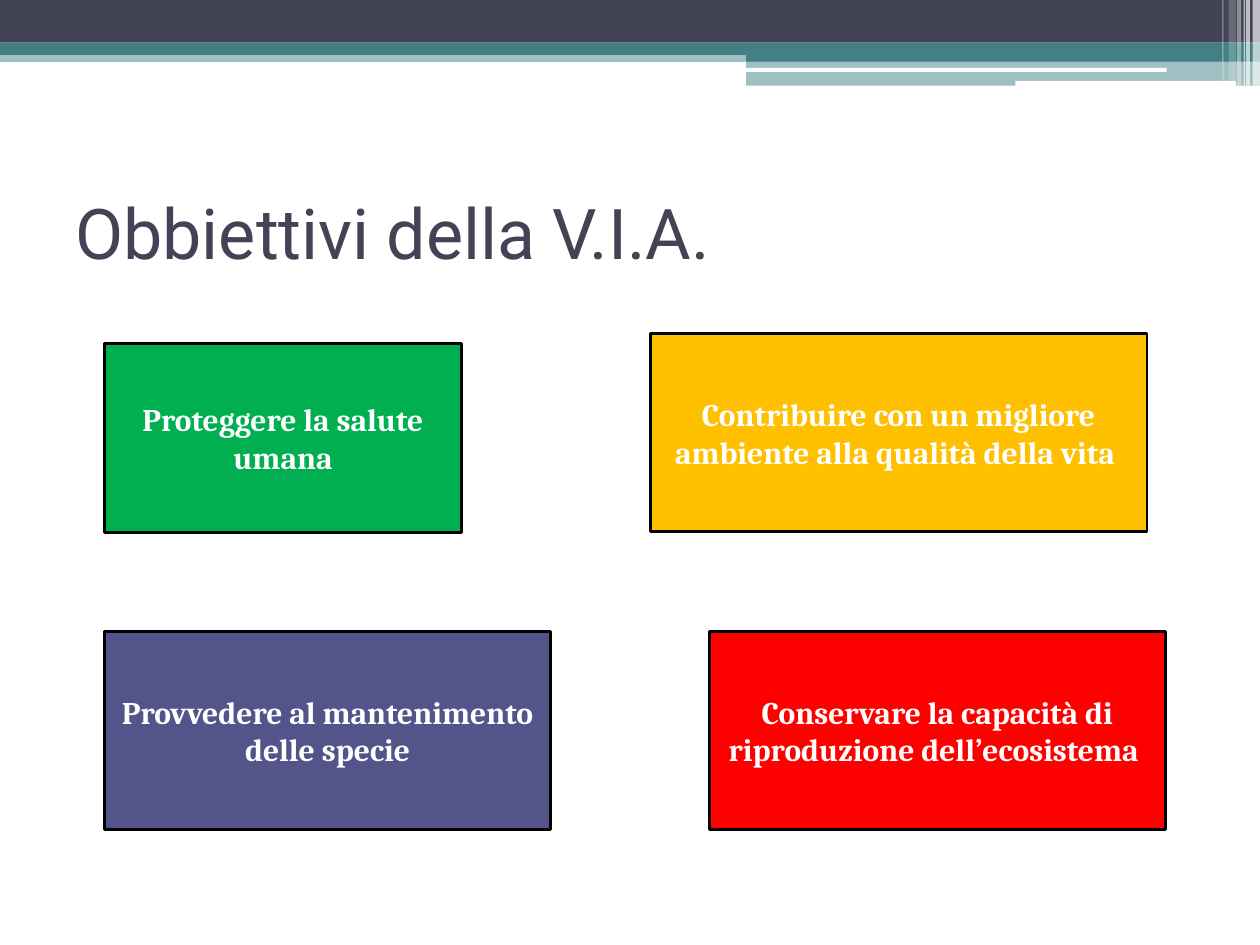
"""Builds a slide on the aims of the V.I.A. with four coloured boxes."""
from lxml.etree import SubElement
from pptx import Presentation
from pptx.dml.color import RGBColor
from pptx.enum.shapes import MSO_SHAPE
from pptx.enum.text import MSO_ANCHOR, PP_ALIGN
from pptx.oxml.ns import qn
from pptx.util import Cm, Pt

WIDTH, HEIGHT = 25.4, 19.05
WHITE, BLACK, DARK, TEAL = "FFFFFF", "000000", "424456", "438086"

BANDS = [
    (0, 1.02, WIDTH, 0.23, TEAL, 50),
    (0, 0, WIDTH, 0.86, DARK, 100),
    (0, 0.86, WIDTH, 0.25, TEAL, 100),
    (15.04, 0.99, 10.36, 0.25, TEAL, 100),
    (15.04, 1.22, 10.36, 0.51, TEAL, 50),
]
ROUNDED_LINES = [(15.01, 1.37, 8.51, 0.08), (20.47, 1.63, 4.45, 0.1)]
STRIPES = [
    (25.25, 0.15, 1.73, 65),
    (25.12, 0.08, 1.73, 65),
    (25.07, 0.03, 1.73, 60),
    (24.94, 0.08, 1.73, 40),
    (24.77, 0.15, 1.63, 20),
    (24.64, 0.03, 1.63, 30),
]
GOALS = [
    ("Proteggere la salute umana", 2.11, 6.93, 7.19, 3.81, "00B050"),
    ("Contribuire con un migliore ambiente alla qualità della vita ",
     13.11, 6.73, 10.01, 3.99, "FFC000"),
    ("Provvedere al mantenimento delle specie",
     2.11, 12.73, 8.99, 3.99, "53548A"),
    ("Conservare la capacità di riproduzione dell’ecosistema ",
     14.3, 12.73, 9.19, 3.99, "FF0000"),
]


def paint(color_format, color):
    color_format.rgb = RGBColor.from_string(color)


class SlideBuilder:
    title_font, body_font = "Roboto", "Cambria"

    def __init__(self, slide):
        self.slide = slide

    def block(self, left, top, width, height, color, opacity=100,
              kind=MSO_SHAPE.RECTANGLE):
        shape = self.slide.shapes.add_shape(
            kind, Cm(left), Cm(top), Cm(width), Cm(height))
        shape.shadow.inherit = False
        shape.fill.solid()
        paint(shape.fill.fore_color, color)
        shape.line.fill.background()
        if opacity < 100:
            color_element = shape.element.spPr.find(".//" + qn("a:srgbClr"))
            SubElement(color_element, qn("a:alpha"), val=str(opacity * 1000))
        return shape

    def set_text(self, shape, text, font_name, size, color, bold, alignment):
        text_frame = shape.text_frame
        text_frame.text = text
        text_frame.word_wrap = True
        text_frame.vertical_anchor = MSO_ANCHOR.MIDDLE
        paragraph = text_frame.paragraphs[0]
        paragraph.alignment = alignment
        font = paragraph.runs[0].font
        font.name, font.size, font.bold = font_name, Pt(size), bold
        paint(font.color, color)

    def title(self, text, left, top, width, height):
        shape = self.slide.shapes.add_textbox(
            Cm(left), Cm(top), Cm(width), Cm(height))
        self.set_text(shape, text, self.title_font, 40, DARK, False,
                      PP_ALIGN.LEFT)

    def goal(self, text, left, top, width, height, color):
        shape = self.block(left, top, width, height, color,
                           kind=MSO_SHAPE.FLOWCHART_PROCESS)
        shape.line.width = Pt(1.5)
        paint(shape.line.color, BLACK)
        self.set_text(shape, text, self.body_font, 18, WHITE, True,
                      PP_ALIGN.CENTER)


def main():
    presentation = Presentation()
    presentation.slide_width, presentation.slide_height = Cm(WIDTH), Cm(HEIGHT)
    slide = presentation.slides.add_slide(presentation.slide_layouts[6])
    builder = SlideBuilder(slide)
    for band in BANDS:
        builder.block(*band)
    for line in ROUNDED_LINES:
        builder.block(*line, WHITE, kind=MSO_SHAPE.ROUNDED_RECTANGLE)
    for left, width, height, opacity in STRIPES:
        builder.block(left, 0, width, height, WHITE, opacity)
    builder.title("Obbiettivi della V.I.A.", 1.27, 3.18, 22.86, 2.97)
    for goal in GOALS:
        builder.goal(*goal)
    presentation.save("out.pptx")


if __name__ == "__main__":
    main()
